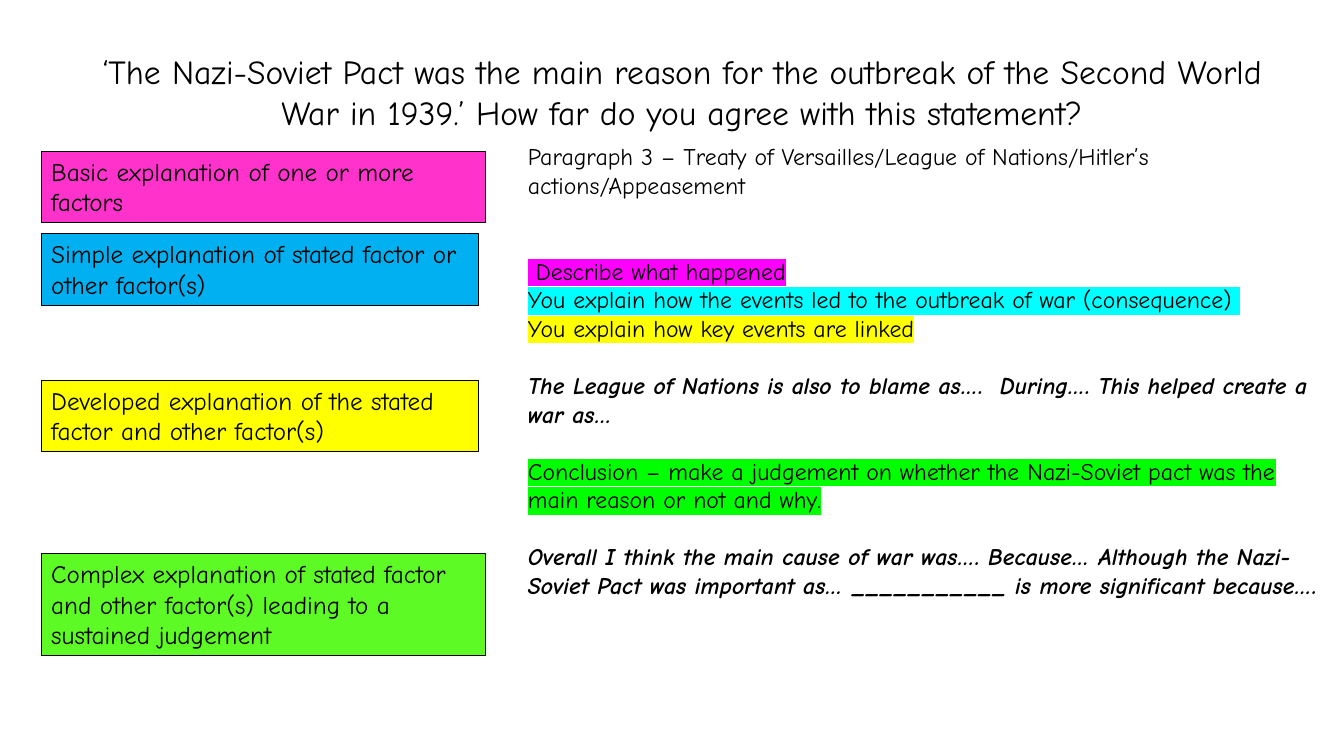
from lxml.etree import SubElement
from pptx import Presentation
from pptx.dml.color import RGBColor
from pptx.enum.shapes import MSO_SHAPE
from pptx.enum.text import MSO_ANCHOR, PP_ALIGN
from pptx.oxml.ns import qn
from pptx.util import Pt

FONT = "Comic Neue"
LINE = 20.4  # height of one line of guide text
COLORS = {
    "black": "000000",
    "pink": "FF33CC",
    "blue": "00B0F0",
    "yellow": "FFFF00",
    "lime": "5EFA26",
    "magenta": "FF00FF",
    "cyan": "00FFFF",
    "green": "00FF00",
}

TITLE = ("‘The Nazi-Soviet Pact was the main reason for the outbreak of the Second "
         "World War in 1939.’ How far do you agree with this statement?")

# Level boxes: text, fill, top, width, height
LEVELS = [
    ("Basic explanation of one or more factors", "pink", 108, 317, 51),
    ("Simple explanation of stated factor or other factor(s)", "blue", 167, 312.5, 51),
    ("Developed explanation of the stated factor and other factor(s)",
     "yellow", 271.5, 312.5, 51),
    ("Complex explanation of stated factor and other factor(s) leading to a "
     "sustained judgement", "lime", 395.5, 317, 72.5),
]

# Guide: text, highlight, model answer or not, lines of space before
GUIDE = [
    ("Paragraph 3 – Treaty of Versailles/League of Nations/Hitler’s "
     "actions/Appeasement", None, False, 0),
    (" Describe what happened", "magenta", False, 2),
    ("You explain how the events led to the outbreak of war (consequence) ",
     "cyan", False, 0),
    ("You explain how key events are linked", "yellow", False, 0),
    ("The League of Nations is also to blame as….  During…. This helped create "
     "a war as…", None, True, 1),
    ("Conclusion – make a judgement on whether the Nazi-Soviet pact was the main "
     "reason or not and why.", "green", False, 1),
    ("Overall I think the main cause of war was…. Because… Although the "
     "Nazi-Soviet Pact was important as… ___________ is more significant "
     "because….", None, True, 1),
]


def color(name):
    return RGBColor.from_string(COLORS[name])


def style(para, size, align=PP_ALIGN.LEFT):
    para.alignment = align
    for run in para.runs:
        run.font.size = Pt(size)
        run.font.name = FONT
        run.font.color.rgb = color("black")


def mark(run, name):
    """Highlight a run; the element must follow the text fill."""
    props = run.font._element
    light = SubElement(props, qn("a:highlight"))
    SubElement(light, qn("a:srgbClr"), val=COLORS[name])
    props.find(qn("a:solidFill")).addnext(light)


def add_title(slide):
    title = slide.shapes.title
    title.left, title.top, title.width, title.height = Pt(45.5), Pt(33), Pt(883), Pt(65.5)
    frame = title.text_frame
    frame.text = TITLE
    frame.word_wrap = True
    frame.vertical_anchor = MSO_ANCHOR.TOP
    style(frame.paragraphs[0], 24, PP_ALIGN.CENTER)


def add_level(slide, text, fill, top, width, height):
    box = slide.shapes.add_shape(
        MSO_SHAPE.RECTANGLE, Pt(29.5), Pt(top), Pt(width), Pt(height))
    box.shadow.inherit = False
    box.fill.solid()
    box.fill.fore_color.rgb = color(fill)
    box.line.color.rgb = color("black")
    box.line.width = Pt(0.75)
    frame = box.text_frame
    frame.text = text
    frame.word_wrap = True
    frame.vertical_anchor = MSO_ANCHOR.TOP
    style(frame.paragraphs[0], 18)


def add_guide(slide):
    box = slide.shapes.add_textbox(Pt(370), Pt(98), Pt(590), Pt(357))
    frame = box.text_frame
    frame.word_wrap = True
    for i, (text, light, model, gap) in enumerate(GUIDE):
        para = frame.add_paragraph() if i else frame.paragraphs[0]
        para.text = text
        para.space_before = Pt(gap * LINE)
        style(para, 17)
        run = para.runs[0]
        run.font.bold = run.font.italic = model
        if light:
            mark(run, light)


def main():
    deck = Presentation()
    deck.slide_width, deck.slide_height = Pt(960), Pt(540)
    slide = deck.slides.add_slide(deck.slide_layouts[5])

    # Question
    add_title(slide)

    # Mark levels on the left
    for level in LEVELS:
        add_level(slide, *level)

    # Writing guide on the right
    add_guide(slide)

    deck.save("out.pptx")


if __name__ == "__main__":
    main()
